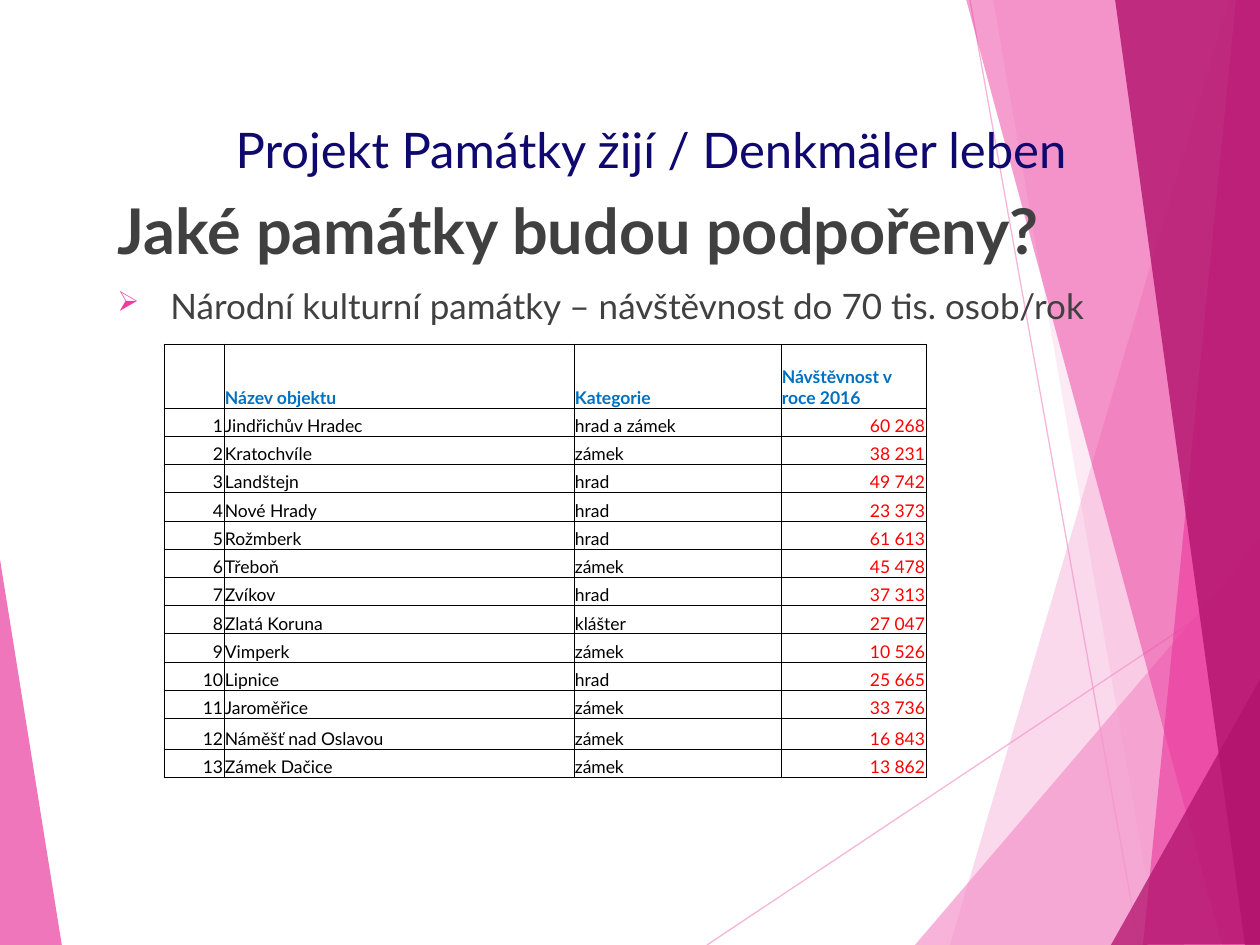
from lxml import etree
from pptx import Presentation
from pptx.dml.color import RGBColor
from pptx.enum.shapes import MSO_CONNECTOR
from pptx.enum.text import MSO_ANCHOR, MSO_AUTO_SIZE, PP_ALIGN
from pptx.oxml.ns import qn
from pptx.util import Pt

STRAIGHT = MSO_CONNECTOR.STRAIGHT
TOP, BOTTOM = MSO_ANCHOR.TOP, MSO_ANCHOR.BOTTOM
LEFT, CENTER, RIGHT = PP_ALIGN.LEFT, PP_ALIGN.CENTER, PP_ALIGN.RIGHT
NO_AUTOFIT = MSO_AUTO_SIZE.NONE

# Content
TITLE = "Projekt Památky žijí / Denkmäler leben"
QUESTION = "Jaké památky budou podpořeny?"
CRITERION = "Národní kulturní památky – návštěvnost do 70 tis. osob/rok"
HEADER = ("", "Název objektu", "Kategorie", "Návštěvnost v roce 2016")
MONUMENTS = [
    ("Jindřichův Hradec", "hrad a zámek", "60 268"),
    ("Kratochvíle", "zámek", "38 231"),
    ("Landštejn", "hrad", "49 742"),
    ("Nové Hrady", "hrad", "23 373"),
    ("Rožmberk", "hrad", "61 613"),
    ("Třeboň", "zámek", "45 478"),
    ("Zvíkov", "hrad", "37 313"),
    ("Zlatá Koruna", "klášter", "27 047"),
    ("Vimperk", "zámek", "10 526"),
    ("Lipnice", "hrad", "25 665"),
    ("Jaroměřice", "zámek", "33 736"),
    ("Náměšť nad Oslavou", "zámek", "16 843"),
    ("Zámek Dačice", "zámek", "13 862"),
]

# Layout in px, colours and font
PX = 914400 / 126
SLIDE_SIZE = (1260, 945)
TITLE_BOX = (105, 113, 1092, 62)
BODY_BOX = (105, 185, 1111, 714)
TABLE_AT = (164, 344)
COLUMN_WIDTHS = (60, 350, 207, 145)
HEADER_HEIGHT, ROW_HEIGHT, TALL_ROW_HEIGHT, TALL_ROW = 64, 28.25, 31, 12
BULLET_INDENT = 53
FONT = "Lato"
PALE, PINK, DARK = "F496CB", "EB3D9F", "B2136D"

# Decoration: rays are (start, end), facets are (colour, opacity %, corners)
RAYS = [((707, 945), (1261, 576)), ((970, 0), (1139, 945))]
FACETS = [
    (PALE, 36, [(1229, 0), (950, 945), (1263, 946), (1261, 1)]),
    (PALE, 20, [(993, -1), (1158, 945), (1261, 945), (1261, -1)]),
    (PALE, 72, [(915, 945), (1260, 541), (1261, 945)]),
    (PINK, 50, [(966, -1), (1222, 945), (1261, 944), (1261, -1)]),
    (PINK, 66, [(1236, -1), (1143, 945), (1261, 945), (1260, -1)]),
    (DARK, 80, [(1115, -1), (1245, 945), (1263, 945), (1260, -1)]),
    (DARK, 76, [(1111, 945), (1263, 674), (1263, 944)]),
    (PINK, 70, [(-1, 553), (62, 946), (-1, 945)]),
]


def emu(px):
    return round(px * PX)


def rgb(color):
    return RGBColor.from_string(color)


def set_opacity(shape, percent):
    for color in shape._element.spPr.iter(qn("a:srgbClr")):
        etree.SubElement(color, qn("a:alpha"), val=str(percent * 1000))


def write(paragraph, text, size, color, bold=False, align=LEFT):
    paragraph.text = text
    paragraph.alignment = align
    for styled in (paragraph, *paragraph.runs):
        styled.font.name = FONT
        styled.font.size = Pt(size)
        styled.font.bold = bold
        styled.font.color.rgb = rgb(color)


def add_ray(shapes, start, end):
    ray = shapes.add_connector(STRAIGHT, *map(emu, start + end))
    ray.line.color.rgb = rgb(PALE)
    ray.line.width = Pt(0.75)
    set_opacity(ray, 70)
    etree.SubElement(ray._element.spPr, qn("a:effectLst"))


def add_facet(shapes, color, opacity, corners):
    builder = shapes.build_freeform(*corners[0], scale=PX)
    builder.add_line_segments(corners[1:], close=True)
    facet = builder.convert_to_shape()
    facet.shadow.inherit = False
    facet.fill.solid()
    facet.fill.fore_color.rgb = rgb(color)
    facet.line.fill.background()
    set_opacity(facet, opacity)


def add_bullet(paragraph):
    properties = paragraph._p.get_or_add_pPr()
    color = etree.SubElement(properties, qn("a:buClr"))
    etree.SubElement(color, qn("a:srgbClr"), val=PINK)
    etree.SubElement(properties, qn("a:buSzPct"), val="80000")
    etree.SubElement(properties, qn("a:buChar"), char="➢")


def add_borders(cell):
    properties = cell._tc.get_or_add_tcPr()
    for side in ("lnL", "lnR", "lnT", "lnB"):
        border = etree.SubElement(properties, qn("a:" + side), w=str(Pt(0.5)))
        fill = etree.SubElement(border, qn("a:solidFill"))
        etree.SubElement(fill, qn("a:srgbClr"), val="000000")


def add_title(slide):
    title = slide.shapes.title
    title.left, title.top, title.width, title.height = map(emu, TITLE_BOX)
    frame = title.text_frame
    frame.word_wrap = True
    frame.auto_size = NO_AUTOFIT
    frame.vertical_anchor = TOP
    write(frame.paragraphs[0], TITLE, 28, "0F086E", align=CENTER)
    # Bring the title in front of the decoration
    slide.shapes._spTree.append(title._element)


def add_body(shapes):
    frame = shapes.add_textbox(*map(emu, BODY_BOX)).text_frame
    frame.word_wrap = True
    question, criterion = frame.paragraphs[0], frame.add_paragraph()
    write(question, QUESTION, 36, "404040", bold=True)
    write(criterion, CRITERION, 20, "404040")
    for paragraph in (question, criterion):
        paragraph.space_before = Pt(10)
        properties = paragraph._p.get_or_add_pPr()
        properties.set("marL", str(emu(BULLET_INDENT)))
        properties.set("indent", str(-emu(BULLET_INDENT)))
    add_bullet(criterion)


def add_monuments(shapes):
    rows = [HEADER] + [(str(n), *m) for n, m in enumerate(MONUMENTS, 1)]
    heights = [HEADER_HEIGHT] + [ROW_HEIGHT] * len(MONUMENTS)
    heights[TALL_ROW] = TALL_ROW_HEIGHT
    size = (sum(COLUMN_WIDTHS), sum(heights))
    table = shapes.add_table(len(rows), len(HEADER), *map(emu, TABLE_AT + size)).table
    table.first_row = table.horz_banding = False
    for column, width in zip(table.columns, COLUMN_WIDTHS):
        column.width = emu(width)
    body_styles = [("000000", RIGHT), ("000000", LEFT), ("000000", LEFT), ("FF0000", RIGHT)]
    for r, values in enumerate(rows):
        table.rows[r].height = emu(heights[r])
        for c, value in enumerate(values):
            cell = table.cell(r, c)
            cell.margin_left = cell.margin_right = cell.margin_top = emu(1)
            cell.margin_bottom = 0
            cell.vertical_anchor = BOTTOM
            add_borders(cell)
            if r == 0 and value:
                cell.fill.background()
            else:
                cell.fill.solid()
                cell.fill.fore_color.rgb = rgb("FFFFFF")
            color, align = body_styles[c] if r else ("0070C0", LEFT)
            write(cell.text_frame.paragraphs[0], value, 10, color, r == 0, align)


def main():
    deck = Presentation()
    deck.slide_width, deck.slide_height = map(emu, SLIDE_SIZE)
    slide = deck.slides.add_slide(deck.slide_layouts[5])
    for ray in RAYS:
        add_ray(slide.shapes, *ray)
    for facet in FACETS:
        add_facet(slide.shapes, *facet)
    add_title(slide)
    add_body(slide.shapes)
    add_monuments(slide.shapes)
    deck.save("out.pptx")


if __name__ == "__main__":
    main()
